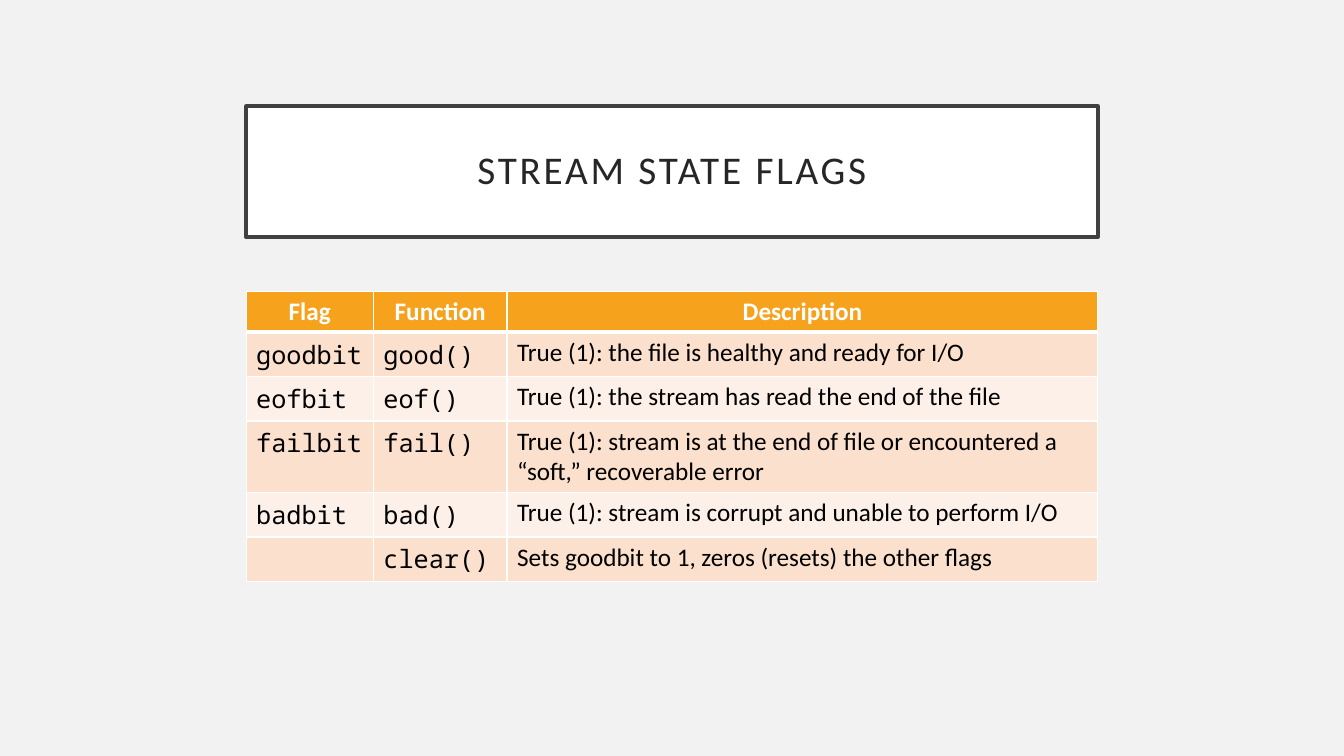
from lxml.etree import SubElement as Sub
from pptx import Presentation
from pptx.dml.color import RGBColor as Rgb
from pptx.enum.shapes import MSO_SHAPE as Kind
from pptx.enum.text import MSO_ANCHOR as Anchor, PP_ALIGN as Align
from pptx.oxml.ns import qn
from pptx.util import Pt

TITLE = "STREAM STATE FLAGS"
HEAD = ("Flag", "Function", "Description")
ROWS = [
    ("goodbit", "good()", "True (1): the file is healthy and ready for I/O"),
    ("eofbit", "eof()", "True (1): the stream has read the end of the file"),
    ("failbit", "fail()", "True (1): stream is at the end of file or "
     "encountered a “soft,” recoverable error"),
    ("badbit", "bad()", "True (1): stream is corrupt and unable to perform I/O"),
    ("", "clear()", "Sets goodbit to 1, zeros (resets) the other flags"),
]
COLORS = {
    "page": "F2F2F2", "white": "FFFFFF", "frame": "404040", "title": "262626",
    "head": "F6A21D", "odd": "FBE0CD", "even": "FDF0E8", "black": "000000",
}
SANS, MONO = "Calibri", "Noto Sans Mono"
FONTS = (MONO, MONO, SANS)
WIDTHS = (90.9, 95.5, 422)
LEFT, WIDE = 175.8, sum(WIDTHS)
ROW = 29.2


def tint(fill, name):
    fill.solid()
    fill.fore_color.rgb = Rgb.from_string(COLORS[name])


def write(frame, text, size=18, font=SANS, color="black", bold=False,
          align=Align.LEFT, space=None, gap=None):
    para = frame.paragraphs[0]
    para.alignment = align
    para.line_spacing = space
    run = para.add_run() if text else None
    face = run.font if run else para.font
    if run:
        run.text = text
    face.size, face.name, face.bold = Pt(size), font, bold
    face.color.rgb = Rgb.from_string(COLORS[color])
    if gap:
        run._r.get_or_add_rPr().set("spc", str(gap * 100))


def edge(cell, base):
    props = cell._tc.get_or_add_tcPr()
    for spot, side in enumerate("LRTB"):
        width = base if side == "B" else 1
        line = Sub(props, qn(f"a:ln{side}"), w=str(Pt(width)))
        Sub(Sub(line, qn("a:solidFill")), qn("a:srgbClr"), val=COLORS["white"])
        props.insert(spot, line)


def add_title(slide):
    box = slide.shapes.add_shape(Kind.RECTANGLE, Pt(LEFT), Pt(75.8), Pt(WIDE), Pt(93.6))
    box.shadow.inherit = False
    tint(box.fill, "white")
    tint(box.line.fill, "frame")
    box.line.width = Pt(2.5)
    frame = box.text_frame
    frame.word_wrap = True
    frame.vertical_anchor = Anchor.MIDDLE
    frame.margin_left = frame.margin_right = Pt(14.4)
    frame.margin_top = frame.margin_bottom = Pt(14.4)
    write(frame, TITLE, size=28, color="title", align=Align.CENTER, space=0.9, gap=2)


def add_flags(slide):
    data = [HEAD, *ROWS]
    grid = slide.shapes.add_table(len(data), len(HEAD), Pt(LEFT), Pt(208.1),
                                  Pt(WIDE), Pt(ROW * len(data))).table
    for col, width in zip(grid.columns, WIDTHS):
        col.width = Pt(width)
    for r, texts in enumerate(data):
        grid.rows[r].height = Pt(ROW)
        for c, text in enumerate(texts):
            cell = grid.cell(r, c)
            if r == 0:
                tint(cell.fill, "head")
                write(cell.text_frame, text, color="white", bold=True, align=Align.CENTER)
            else:
                tint(cell.fill, "odd" if r % 2 else "even")
                write(cell.text_frame, text, font=FONTS[c])
            edge(cell, 1 if r else 3)


def main():
    deck = Presentation()
    deck.slide_width, deck.slide_height = Pt(960), Pt(540)
    slide = deck.slides.add_slide(deck.slide_layouts[6])
    tint(slide.background.fill, "page")
    add_title(slide)
    add_flags(slide)
    deck.save("out.pptx")


if __name__ == "__main__":
    main()
